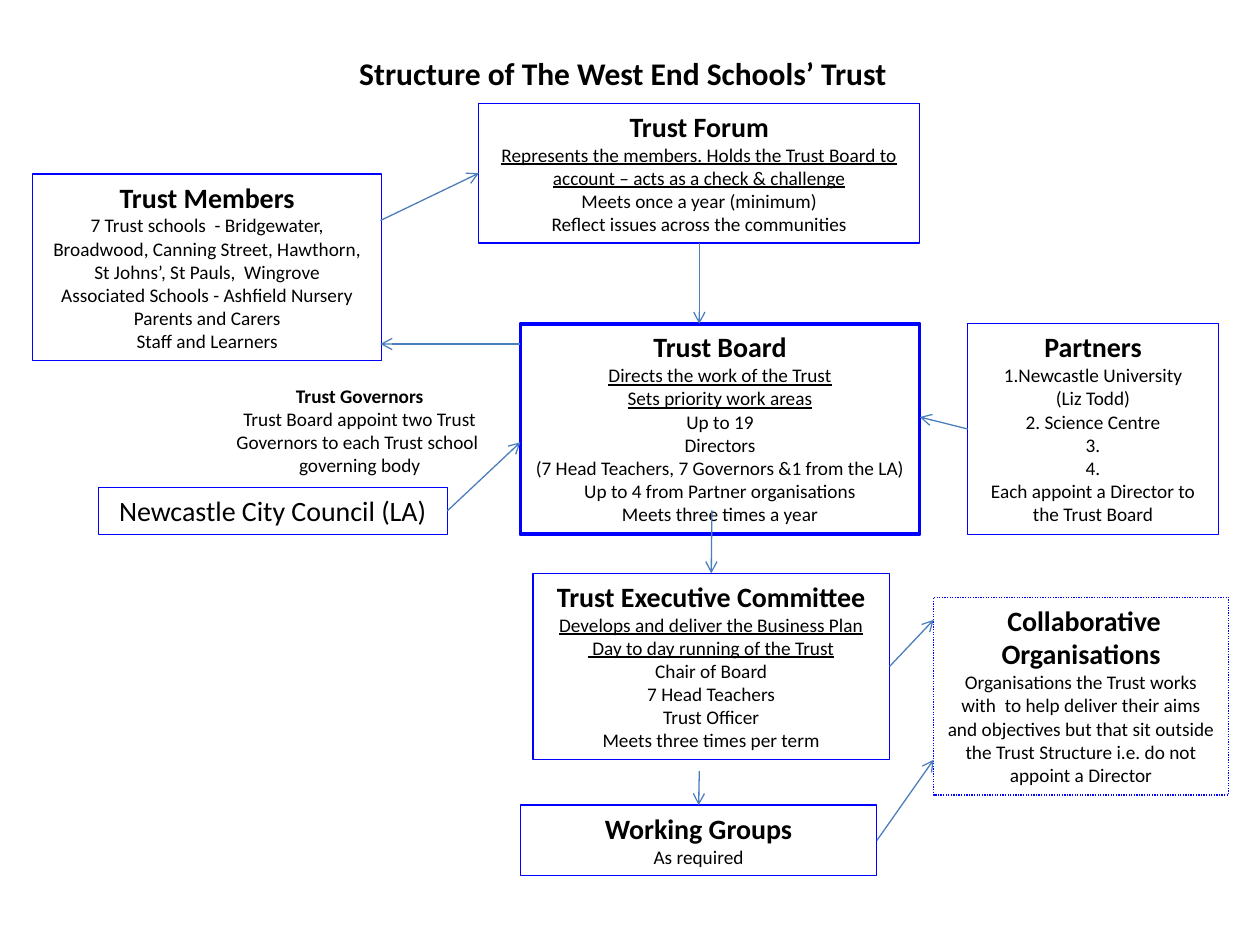
import copy

import pptx
import pptx.util
import pptx.dml.color
import pptx.enum.dml
import pptx.enum.shapes
import pptx.enum.text
import pptx.oxml

# Grid of 100 columns by 75 rows; all places are in grid cells.
COLUMNS, ROWS = 100, 75
CELL = pptx.util.Inches(10) // COLUMNS
TOP, LEFT, BOTTOM, RIGHT = range(4)
BLUE, STEEL, BLACK = "0000FF", "4B7EBC", "000000"
BODY_SIZE, HEADING_SIZE, TITLE_SIZE = 11, 16, 18

TITLE = ("Structure of The West End Schools’ Trust", (16.4, 3.8, 66.1, 4))
GOVERNORS = {
    "place": (16.9, 30, 23.3, 10.3),
    "heading": "Trust Governors",
    "body": ["Trust Board appoint two Trust Governors to each Trust school  governing body"],
}

# "duty" is the underlined paragraph under a heading.
BODIES = {
    "members": {
        "place": (2.6, 13.8, 27.7, 14.8),
        "heading": "Trust Members",
        "body": [
            "7 Trust schools  - Bridgewater, Broadwood, Canning Street, Hawthorn, "
            "St Johns’, St Pauls,  Wingrove",
            "Associated Schools - Ashfield Nursery\nParents and Carers",
            "Staff and Learners",
        ],
    },
    "forum": {
        "place": (38, 8.2, 35, 11.1),
        "heading": "Trust Forum",
        "duty": "Represents the members. Holds the Trust Board to account – "
                "acts as a check & challenge",
        "body": ["Meets once a year (minimum)", "Reflect issues across the communities"],
    },
    "board": {
        "place": (41.3, 25.7, 31.7, 16.7),
        "heading": "Trust Board",
        "duty": "Directs the work of the Trust\nSets priority work areas",
        "body": [
            "Up to 19",
            "Directors\n(7 Head Teachers, 7 Governors &1 from the LA)",
            "Up to 4 from Partner organisations",
            "Meets three times a year",
        ],
        "width": 2,
    },
    "executive": {
        "place": (42.3, 45.5, 28.3, 14.8),
        "heading": "Trust Executive Committee",
        "duty": "Develops and deliver the Business Plan\n Day to day running of the Trust",
        "body": ["Chair of Board", "7 Head Teachers", "Trust Officer",
                 "Meets three times per term"],
    },
    "partners": {
        "place": (76.8, 25.7, 19.9, 16.7),
        "heading": "Partners",
        "body": ["1.Newcastle University\n(Liz Todd)", "2. Science Centre", "3.", "4.",
                 "Each appoint a Director to the Trust Board"],
    },
    "groups": {
        "place": (41.3, 63.9, 28.3, 5.6),
        "heading": "Working Groups",
        "body": ["As required"],
    },
    "collaborators": {
        "place": (74.1, 47.4, 23.4, 15.7),
        "heading": " Collaborative Organisations",
        "body": ["Organisations the Trust works with  to help deliver their aims and objectives "
                 "but that sit outside the Trust Structure i.e. do not appoint a Director"],
        "dash": pptx.enum.dml.MSO_LINE.ROUND_DOT,
    },
    "council": {
        "place": (7.8, 38.7, 27.7, 3.7),
        "heading": "Newcastle City Council (LA)",
        "bold": False,
    },
}

# Each end is a body with the side it joins, or a free grid point.
ARROWS = [
    (("forum", BOTTOM), (55.5, 25.7)),
    ((30.2, 17.5), ("forum", LEFT)),
    ((56.5, 40.5), ("executive", TOP)),
    (("groups", RIGHT), (74.1, 60.3)),
    (("executive", RIGHT), (74.1, 49.2)),
    (("partners", LEFT), (73, 33.1)),
    ((41.3, 27.3), (30.2, 27.3)),
    ((55.5, 61.2), ("groups", TOP)),
    (("council", RIGHT), (41.3, 35.1)),
]


def cells(*counts):
    return [round(count * CELL) for count in counts]


def color(value):
    return pptx.dml.color.RGBColor.from_string(value)


def add_text(frame, text, first=False, size=BODY_SIZE, bold=False, underline=False):
    """Add one centred paragraph; a newline in the text is a line break."""
    paragraph = frame.paragraphs[0] if first else frame.add_paragraph()
    paragraph.alignment = pptx.enum.text.PP_ALIGN.CENTER
    paragraph.text = text
    for run in paragraph.runs:
        font = run.font
        font.name, font.size = "Calibri", pptx.util.Pt(size)
        font.bold, font.underline = bold, underline
        font.color.rgb = color(BLACK)
    for line_break in paragraph._p.findall(pptx.oxml.ns.qn("a:br")):
        line_break.append(copy.deepcopy(paragraph.runs[0]._r.rPr))


def prepare_frame(shape):
    frame = shape.text_frame
    frame.word_wrap = True
    frame.auto_size = pptx.enum.text.MSO_AUTO_SIZE.SHAPE_TO_FIT_TEXT
    frame.vertical_anchor = pptx.enum.text.MSO_ANCHOR.TOP
    return frame


def fill_body(shape, body, heading_size):
    frame = prepare_frame(shape)
    add_text(frame, body["heading"], first=True, size=heading_size, bold=body.get("bold", True))
    if "duty" in body:
        add_text(frame, body["duty"], underline=True)
    for text in body.get("body", []):
        add_text(frame, text)


def add_body(shapes, body):
    box = shapes.add_shape(pptx.enum.shapes.MSO_SHAPE.RECTANGLE, *cells(*body["place"]))
    box.shadow.inherit = False
    box.fill.background()
    box.line.color.rgb = color(BLUE)
    box.line.width = pptx.util.Pt(body.get("width", 0.75))
    if "dash" in body:
        box.line.dash_style = body["dash"]
    fill_body(box, body, HEADING_SIZE)
    return box


def add_arrow(shapes, boxes, start, end):
    points = [(0, 0) if end_point[0] in boxes else cells(*end_point) for end_point in (start, end)]
    arrow = shapes.add_connector(pptx.enum.shapes.MSO_CONNECTOR.STRAIGHT, *points[0], *points[1])
    for end_point, connect in ((start, arrow.begin_connect), (end, arrow.end_connect)):
        if end_point[0] in boxes:
            connect(boxes[end_point[0]], end_point[1])
    arrow.line.color.rgb = color(STEEL)
    arrow.line.width = pptx.util.Pt(0.75)
    properties = arrow._element.spPr
    head = pptx.oxml.ns.qn("a:tailEnd")
    arrow.line._get_or_add_ln().append(properties.makeelement(head, {"type": "arrow"}))
    properties.append(properties.makeelement(pptx.oxml.ns.qn("a:effectLst"), {}))


def main():
    deck = pptx.Presentation()
    deck.slide_width, deck.slide_height = cells(COLUMNS, ROWS)
    shapes = deck.slides.add_slide(deck.slide_layouts[6]).shapes

    title, place = TITLE
    fill_body(shapes.add_textbox(*cells(*place)), {"heading": title}, TITLE_SIZE)
    boxes = {name: add_body(shapes, body) for name, body in BODIES.items()}
    fill_body(shapes.add_textbox(*cells(*GOVERNORS["place"])), GOVERNORS, BODY_SIZE)
    for start, end in ARROWS:
        add_arrow(shapes, boxes, start, end)
    deck.save("out.pptx")


if __name__ == "__main__":
    main()
